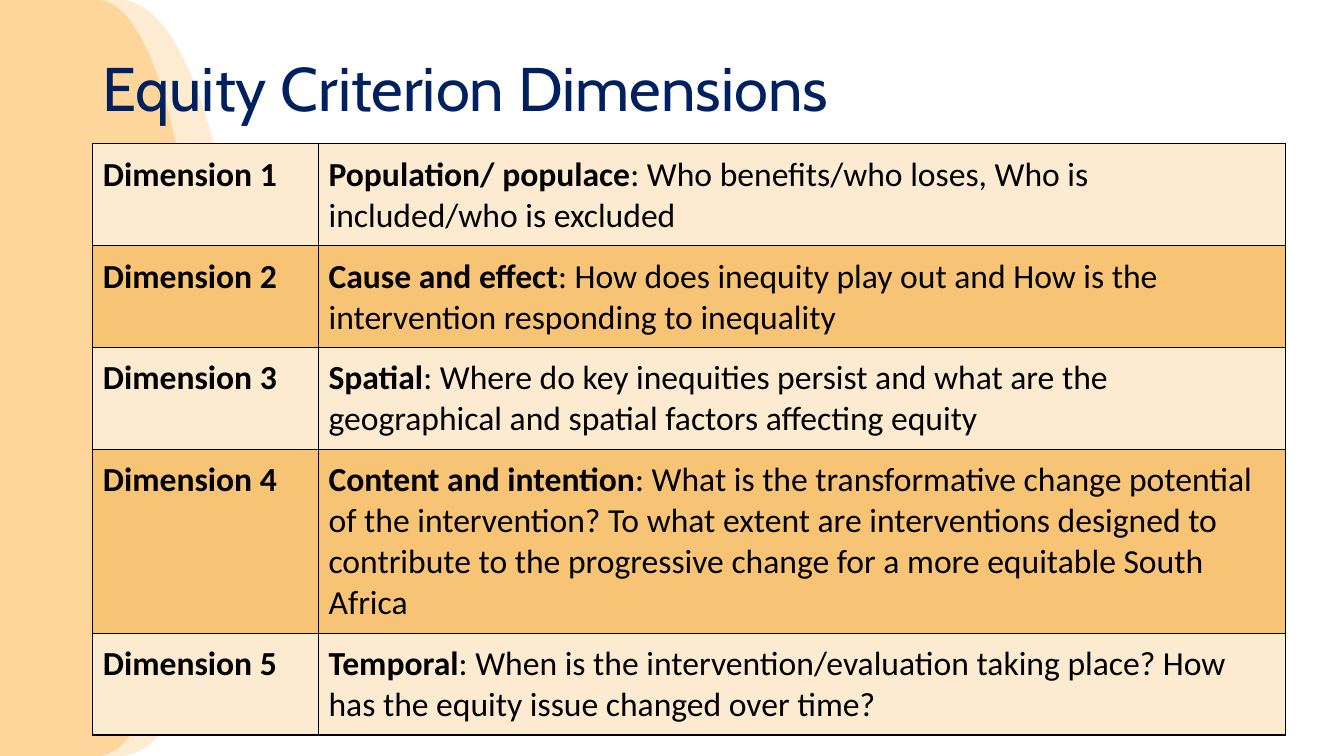
from dataclasses import dataclass

from lxml import etree
from pptx import Presentation
from pptx import util as u
from pptx.dml.color import RGBColor
from pptx.enum import shapes, text
from pptx.oxml import ns

PX = 9525


@dataclass(frozen=True)
class Theme:
    title_font: str = "Cabin"
    body_font: str = "Calibri"
    title_size: int = 44
    body_size: int = 24
    border_width: int = 1
    title: str = "002060"
    ink: str = "000000"
    curve: str = "FEAF3E"
    bands: tuple[str, str] = ("FCEBD1", "F7C475")


@dataclass(frozen=True)
class Curve:
    left: int
    width: int
    opacity: int


@dataclass(frozen=True)
class Dimension:
    name: str
    question: str
    height: int = 97


THEME = Theme()
SLIDE_WIDTH, SLIDE_HEIGHT = 1280, 720
TITLE_BOX = (88, 38, 1104, 99)
TABLE_LEFT, TABLE_TOP = 88, 137
COLUMNS = (215, 921)
CELL_MARGIN = 10

CURVES = (Curve(0, 228, 23), Curve(-2, 190, 37))
DIMENSIONS = (
    Dimension("Population/ populace", "Who benefits/who loses, Who is included/who is excluded"),
    Dimension("Cause and effect", "How does inequity play out and How is the intervention "
              "responding to inequality"),
    Dimension("Spatial", "Where do key inequities persist and what are the geographical "
              "and spatial factors affecting equity"),
    Dimension("Content and intention", "What is the transformative change potential of the "
              "intervention? To what extent are interventions designed to contribute to the "
              "progressive change for a more equitable South Africa", 175),
    Dimension("Temporal", "When is the intervention/evaluation taking place? How has the "
              "equity issue changed over time?"),
)


def px(*lengths: int) -> list[u.Emu]:
    return [u.Emu(length * PX) for length in lengths]


def style_font(font, name: str, size: int, color: str, bold: bool = False) -> None:
    font.name = name
    font.size = u.Pt(size)
    font.bold = bold
    font.color.rgb = RGBColor.from_string(color)


def add_curve(slide, curve: Curve) -> None:
    shape = slide.shapes.add_shape(
        shapes.MSO_SHAPE.FLOWCHART_DELAY, *px(curve.left, 0, curve.width, SLIDE_HEIGHT))
    shape.shadow.inherit = False
    shape.line.fill.background()
    shape.fill.solid()
    shape.fill.fore_color.rgb = RGBColor.from_string(THEME.curve)
    color = shape.fill._xPr.find(".//" + ns.qn("a:srgbClr"))
    etree.SubElement(color, ns.qn("a:alpha"), val=str(curve.opacity * 1000))


def add_title(slide, title: str) -> None:
    text_frame = slide.shapes.add_textbox(*px(*TITLE_BOX)).text_frame
    text_frame.word_wrap = True
    text_frame.vertical_anchor = text.MSO_ANCHOR.MIDDLE
    text_frame.text = title
    paragraph = text_frame.paragraphs[0]
    paragraph.line_spacing = 0.9
    style_font(paragraph.runs[0].font, THEME.title_font, THEME.title_size, THEME.title)


def add_borders(cell) -> None:
    properties = cell._tc.get_or_add_tcPr()
    for side in ("lnL", "lnR", "lnT", "lnB"):
        line = etree.SubElement(properties, ns.qn(f"a:{side}"), w=str(u.Pt(THEME.border_width)))
        fill = etree.SubElement(line, ns.qn("a:solidFill"))
        etree.SubElement(fill, ns.qn("a:srgbClr"), val=THEME.ink)


def fill_cell(cell, heading: str, detail: str, color: str) -> None:
    """Write a bold heading and a regular detail on a bordered band."""
    add_borders(cell)
    cell.fill.solid()
    cell.fill.fore_color.rgb = RGBColor.from_string(color)
    cell.margin_left, cell.margin_right, cell.margin_top, cell.margin_bottom = px(
        *[CELL_MARGIN] * 4)
    paragraph = cell.text_frame.paragraphs[0]
    paragraph.text = heading
    if detail:
        paragraph.add_run().text = detail
    for index, run in enumerate(paragraph.runs):
        style_font(run.font, THEME.body_font, THEME.body_size, THEME.ink, bold=index == 0)


def add_dimension_table(slide) -> None:
    height = sum(dimension.height for dimension in DIMENSIONS)
    table = slide.shapes.add_table(
        len(DIMENSIONS), len(COLUMNS),
        *px(TABLE_LEFT, TABLE_TOP, sum(COLUMNS), height)).table
    for column, width in zip(table.columns, px(*COLUMNS)):
        column.width = width
    for index, dimension in enumerate(DIMENSIONS):
        color = THEME.bands[index % 2]
        table.rows[index].height = px(dimension.height)[0]
        fill_cell(table.cell(index, 0), f"Dimension {index + 1}", "", color)
        fill_cell(table.cell(index, 1), dimension.name, f": {dimension.question}", color)


def main() -> None:
    presentation = Presentation()
    presentation.slide_width, presentation.slide_height = px(SLIDE_WIDTH, SLIDE_HEIGHT)
    slide = presentation.slides.add_slide(presentation.slide_layouts[6])
    for curve in CURVES:
        add_curve(slide, curve)
    add_title(slide, "Equity Criterion Dimensions")
    add_dimension_table(slide)
    presentation.save("out.pptx")


if __name__ == "__main__":
    main()
